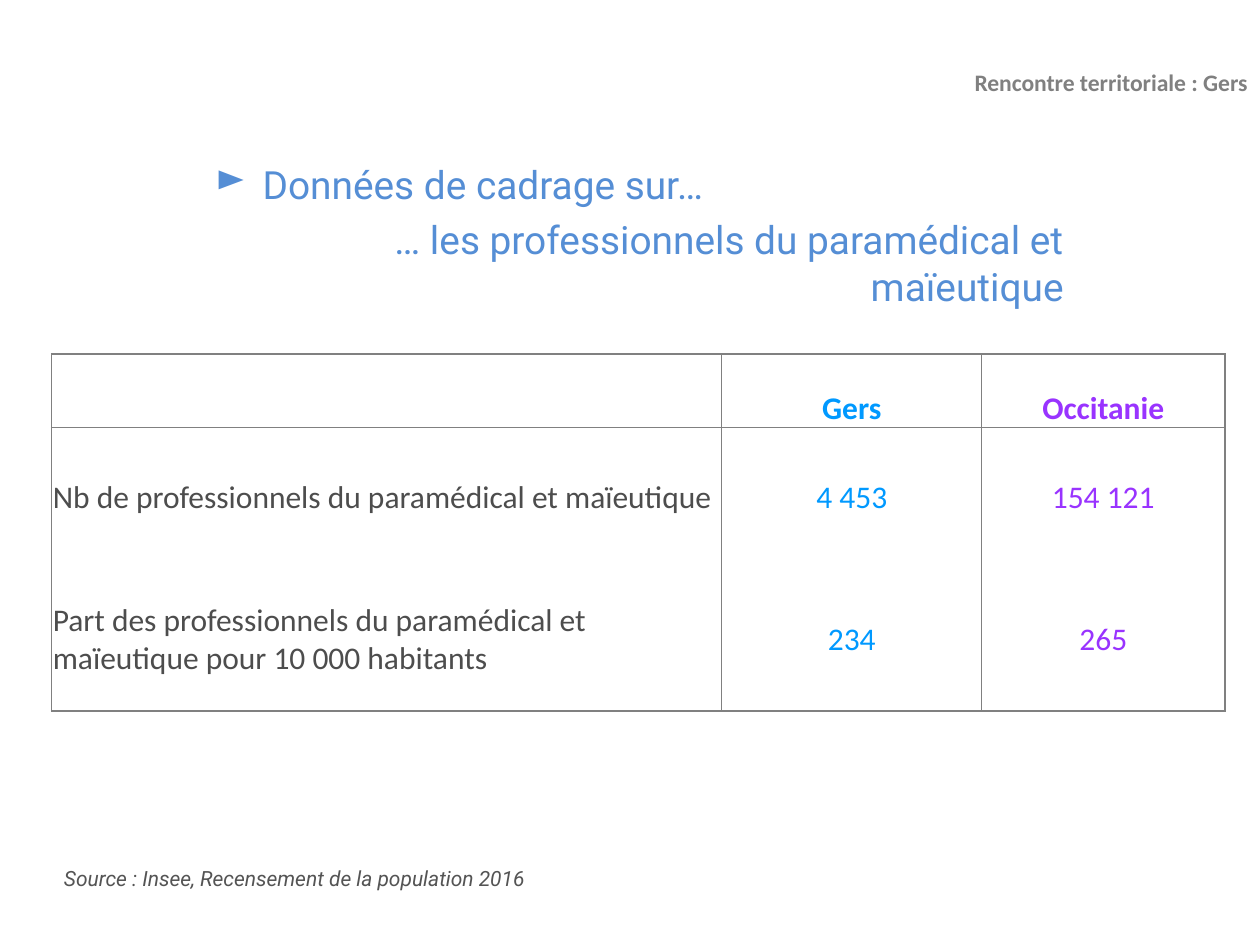
from dataclasses import dataclass

from lxml.etree import SubElement
from pptx import Presentation
from pptx.dml.color import RGBColor
from pptx.enum.text import MSO_ANCHOR as Anchor, PP_ALIGN as Align
from pptx.oxml import parse_xml
from pptx.oxml.ns import nsdecls, qn
from pptx.util import Pt

COLORS = {
    "blue": "558ED5",
    "gray": "808080",
    "source": "545454",
    "label": "4D4D4D",
    "gers": "0099FF",
    "occitanie": "9933FF",
}


@dataclass
class Line:
    text: str
    size: float
    color: str
    font: str = "Roboto"
    align: Align = Align.LEFT
    bold: bool = False
    italic: bool = False
    before: float = 0
    bullet: str = ""


@dataclass
class TextBlock:
    left: float
    top: float
    width: float
    height: float
    lines: list[Line]
    anchor: Anchor = Anchor.TOP
    bottom_inset: float = 3.6


def write_line(paragraph, line: Line) -> None:
    paragraph.text = line.text
    paragraph.alignment = line.align
    paragraph.space_before = Pt(line.before)
    font = paragraph.font
    font.name, font.size = line.font, Pt(line.size)
    font.bold, font.italic = line.bold, line.italic
    font.color.rgb = RGBColor.from_string(COLORS[line.color])
    if line.bullet:
        properties = paragraph._p.get_or_add_pPr()
        properties.set("marL", str(Pt(27)))
        properties.set("indent", str(-Pt(27)))
        bullet = SubElement(properties, qn("a:buChar"), char=line.bullet)
        properties.find(qn("a:defRPr")).addprevious(bullet)


def draw_text(slide, block: TextBlock) -> None:
    frame = slide.shapes.add_textbox(
        Pt(block.left), Pt(block.top), Pt(block.width), Pt(block.height)
    ).text_frame
    frame.word_wrap = True
    frame.vertical_anchor = block.anchor
    frame.margin_bottom = Pt(block.bottom_inset)
    for index, line in enumerate(block.lines):
        paragraph = frame.add_paragraph() if index else frame.paragraphs[0]
        write_line(paragraph, line)


def set_borders(cell, widths: dict[str, float]) -> None:
    """Border widths in points, keyed L, R, T, B; zero hides the border."""
    properties = cell._tc.get_or_add_tcPr()
    for index, (side, width) in enumerate(widths.items()):
        paint = (
            f'<a:solidFill><a:srgbClr val="{COLORS["gray"]}"/></a:solidFill>'
            if width else "<a:noFill/>"
        )
        border = f'<a:ln{side} {nsdecls("a")} w="{Pt(width)}">{paint}</a:ln{side}>'
        properties.insert(index, parse_xml(border))


def draw_table(slide, rows: list[list[str]]) -> None:
    widths, heights = [383, 148.5, 139], [42, 80, 82]
    column_colors = ["label", "gers", "occitanie"]
    table = slide.shapes.add_table(
        len(heights), len(widths), Pt(29.5), Pt(202.3), Pt(sum(widths)), Pt(sum(heights))
    ).table
    table.horz_banding = False
    for column, width in zip(table.columns, widths):
        column.width = Pt(width)
    for r, (row, height) in enumerate(zip(rows, heights)):
        table.rows[r].height = Pt(height)
        for c, text in enumerate(row):
            cell = table.cell(r, c)
            cell.fill.background()
            cell.vertical_anchor = Anchor.MIDDLE if r else Anchor.BOTTOM
            cell.margin_left = cell.margin_right = cell.margin_top = Pt(0.7)
            cell.margin_bottom = 0
            align = Align.CENTER if c else Align.LEFT
            write_line(
                cell.text_frame.paragraphs[0],
                Line(text, 18, column_colors[c], "Calibri", align, bold=r == 0),
            )
            # Outer frame and header rule are thicker; data rows have no rule
            set_borders(cell, {
                "L": 0.5 if c else 1,
                "R": 1 if c == len(widths) - 1 else 0.5,
                "T": 0 if r == 2 else 1,
                "B": 0 if r == 1 else 1,
            })


def main() -> None:
    deck = Presentation()
    deck.slide_width, deck.slide_height = Pt(720), Pt(540)
    slide = deck.slides.add_slide(deck.slide_layouts[6])

    # Running header
    draw_text(slide, TextBlock(
        127.5, 21.6, 592.5, 67,
        [Line("Rencontre territoriale : Gers", 13.5, "gray", "Calibri", Align.RIGHT, bold=True)],
        Anchor.MIDDLE, bottom_inset=20,
    ))

    # Section title
    draw_text(slide, TextBlock(116, 88.5, 499, 90.7, [
        Line("Données de cadrage sur…", 22.2, "blue", before=4.5, bullet="►"),
        Line("… les professionnels du paramédical et maïeutique", 22.2, "blue",
             align=Align.RIGHT, before=4.5),
    ]))

    # Key figures
    draw_table(slide, [
        ["", "Gers", "Occitanie"],
        ["Nb de professionnels du paramédical et maïeutique", "4 453", "154 121"],
        ["Part des professionnels du paramédical et maïeutique pour 10 000 habitants",
         "234", "265"],
    ])

    # Source note
    draw_text(slide, TextBlock(29.5, 491, 521.3, 22.3, [
        Line("Source : Insee, Recensement de la population 2016", 12, "source",
             italic=True, before=2.4),
    ]))

    deck.save("out.pptx")


if __name__ == "__main__":
    main()
